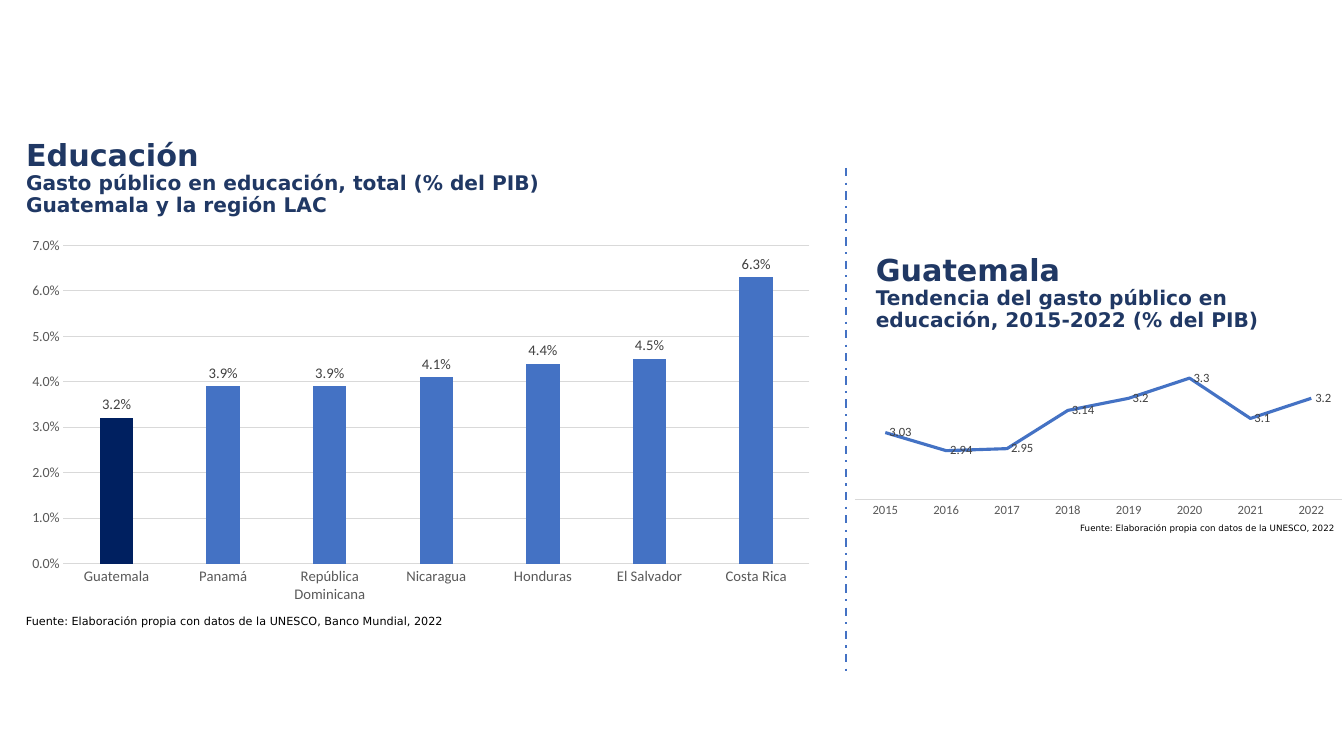
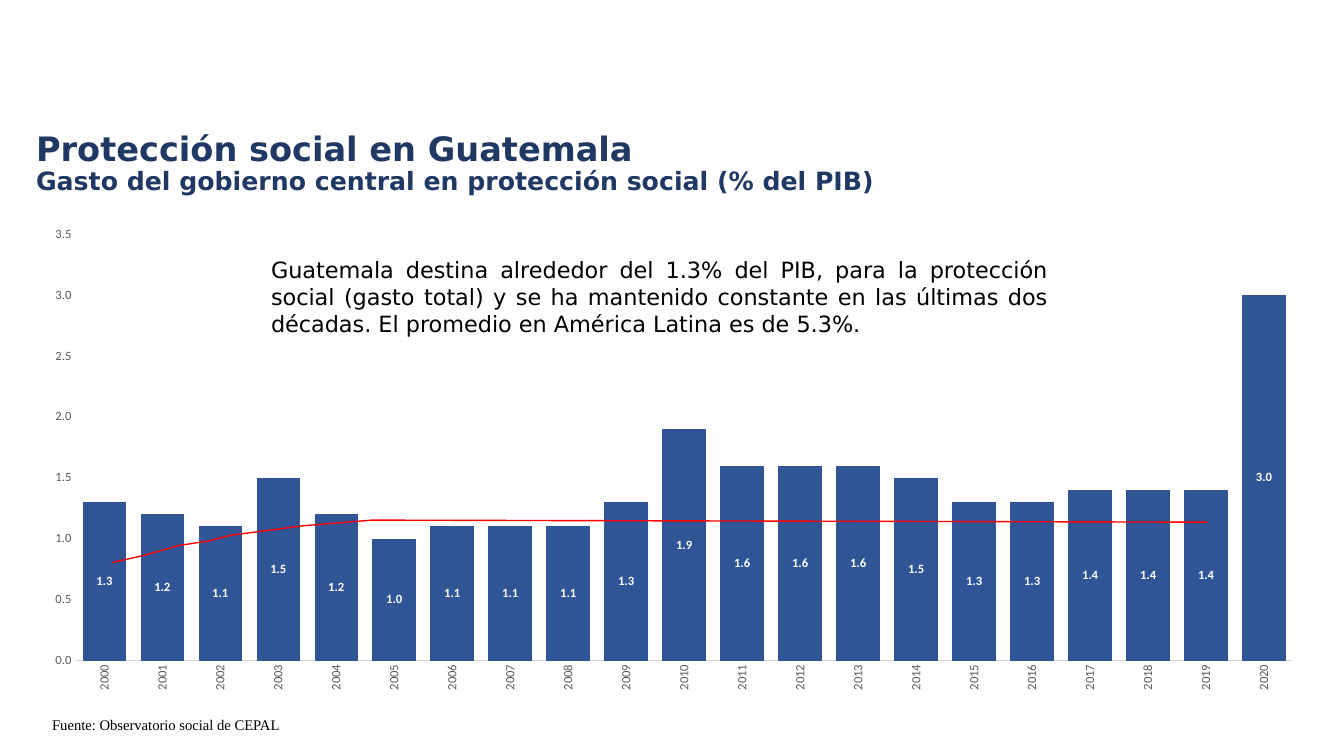
"""Build two slides on public social spending in Guatemala."""
from lxml import etree
from pptx import Presentation
from pptx.chart.data import CategoryChartData
from pptx.dml.color import RGBColor
from pptx.enum import chart as ch, dml, shapes, text
from pptx.oxml import parse_xml
from pptx.oxml.ns import nsdecls, qn
from pptx.util import Pt

COLORS = {
    "title": "203864", "text": "000000", "axis": "595959", "rule": "D9D9D9",
    "label": "404040", "blue": "4472C4", "highlight": "002060",
    "bar": "2F5597", "white": "FFFFFF", "trend": "FF0000",
}
SANS, SERIF, CHART_FONT = "DejaVu Sans", "Times New Roman", "Calibri"
ALIGN = text.PP_ALIGN


def rgb(name):
    return RGBColor.from_string(COLORS[name])


def style_font(font, size, color, face=CHART_FONT, bold=False):
    font.size, font.name, font.bold = Pt(size), face, bold
    font.color.rgb = rgb(color)


def style_line(line, color, width):
    line.color.rgb, line.width = rgb(color), Pt(width)


def add_text(slide, box, lines, face=SANS, color="text", bold=False,
             align=ALIGN.LEFT, spacing=1.0, anchor=text.MSO_ANCHOR.TOP):
    frame = slide.shapes.add_textbox(*map(Pt, box)).text_frame
    frame.word_wrap, frame.vertical_anchor = True, anchor
    frame.text = "\n".join(wording for wording, _ in lines)
    for paragraph, (_, size) in zip(frame.paragraphs, lines):
        paragraph.alignment, paragraph.line_spacing = align, spacing
        style_font(paragraph.runs[0].font, size, color, face, bold)


def add_title(slide, box, lines):
    add_text(slide, box, lines, color="title", bold=True, spacing=0.9,
             anchor=text.MSO_ANCHOR.MIDDLE)


def add_chart(slide, box, kind, categories, values, number_format,
              axis_size, label_size, label_color, label_place, bold=False):
    data = CategoryChartData(number_format=number_format)
    data.categories = categories
    data.add_series("Gasto público (% del PIB)", values)
    chart = slide.shapes.add_chart(kind, *map(Pt, box), data).chart
    chart.has_legend = chart.has_title = False
    style_font(chart.font, 10, "text")
    years = chart.category_axis
    years.major_tick_mark = ch.XL_TICK_MARK.NONE
    style_font(years.tick_labels.font, axis_size, "axis")
    style_line(years.format.line, "rule", 0.75)
    plot = chart.plots[0]
    plot.vary_by_categories = False
    plot.has_data_labels = True
    labels = plot.data_labels
    labels.show_value, labels.position = True, label_place
    labels.number_format, labels.number_format_is_linked = number_format, False
    style_font(labels.font, label_size, label_color, bold=bold)
    return chart


def scale_values(chart, low, high, step, gridlines=False):
    axis = chart.value_axis
    axis.minimum_scale, axis.maximum_scale, axis.major_unit = low, high, step
    axis.has_major_gridlines = gridlines
    if gridlines:
        style_line(axis.major_gridlines.format.line, "rule", 0.75)
    return axis


def style_value_axis(axis, size, number_format):
    axis.major_tick_mark = ch.XL_TICK_MARK.NONE
    axis.format.line.fill.background()
    labels = axis.tick_labels
    labels.number_format, labels.number_format_is_linked = number_format, False
    style_font(labels.font, size, "axis")


def style_bars(chart, color, gap, overlap):
    plot = chart.plots[0]
    plot.gap_width, plot.overlap = gap, overlap
    fill = plot.series[0].format.fill
    fill.solid()
    fill.fore_color.rgb = rgb(color)


def place_plot(chart, x, y, w, h):
    area = chart._chartSpace.xpath("c:chart/c:plotArea")[0]
    for layout in area.xpath("c:layout"):
        area.remove(layout)
    sizes = "".join(f'<c:{tag} val="{value}"/>'
                    for tag, value in zip("xywh", (x, y, w, h)))
    area.insert(0, parse_xml(
        f'<c:layout {nsdecls("c")}><c:manualLayout>'
        '<c:layoutTarget val="inner"/><c:xMode val="edge"/>'
        f'<c:yMode val="edge"/>{sizes}</c:manualLayout></c:layout>'))


def add_divider(slide, x, top, bottom):
    divider = slide.shapes.add_connector(
        shapes.MSO_CONNECTOR.STRAIGHT, Pt(x), Pt(top), Pt(x), Pt(bottom))
    style_line(divider.line, "blue", 1.5)
    divider.line.dash_style = dml.MSO_LINE.DASH_DOT
    etree.SubElement(divider._element.spPr, qn("a:effectLst"))


def add_trend(slide, points):
    start, *rest = [(Pt(x), Pt(y)) for x, y in points]
    builder = slide.shapes.build_freeform(*start)
    builder.add_line_segments(rest, close=False)
    trend = builder.convert_to_shape()
    trend.shadow.inherit = False
    trend.fill.background()
    style_line(trend.line, "trend", 1)


def build_education(slide):
    add_title(slide, (11.5, 92.4, 396.7, 70.6), [
        ("Educación", 21.6),
        ("Gasto público en educación, total (% del PIB)", 14.4),
        ("Guatemala y la región LAC", 14.4)])
    add_text(slide, (11.5, 436.3, 336.2, 18.7), [
        ("Fuente: Elaboración propia con datos de la UNESCO, Banco Mundial, 2022", 8)],
        spacing=0.9)
    region = add_chart(
        slide, (11.5, 164.2, 578.2, 272.2), ch.XL_CHART_TYPE.COLUMN_CLUSTERED,
        ["Guatemala", "Panamá", "República Dominicana", "Nicaragua",
         "Honduras", "El Salvador", "Costa Rica"],
        [0.032, 0.039, 0.039, 0.041, 0.044, 0.045, 0.063], "0.0%",
        10.5, 10.5, "label", ch.XL_LABEL_POSITION.OUTSIDE_END)
    style_value_axis(scale_values(region, 0, 0.07, 0.01, True), 10, "0.0%")
    style_bars(region, "blue", 219, -27)
    guatemala = region.plots[0].series[0].points[0].format.fill
    guatemala.solid()
    guatemala.fore_color.rgb = rgb("highlight")

    history = add_chart(
        slide, (603.4, 253.4, 362.2, 118.8), ch.XL_CHART_TYPE.LINE,
        [str(year) for year in range(2015, 2023)],
        [3.03, 2.94, 2.95, 3.14, 3.2, 3.3, 3.1, 3.2], "General",
        9, 9, "label", ch.XL_LABEL_POSITION.RIGHT)
    scale_values(history, 2.7, 3.4, 0.1).visible = False
    spending = history.plots[0].series[0]
    spending.smooth = False
    spending.marker.style = ch.XL_MARKER_STYLE.NONE
    style_line(spending.format.line, "blue", 2.25)
    add_divider(slide, 604, 120, 480)
    add_text(slide, (624.2, 372.2, 336.2, 13), [
        ("Fuente: Elaboración propia con datos de la UNESCO, 2022", 6.2)],
        align=ALIGN.RIGHT, spacing=0.7)
    add_title(slide, (618.5, 174.2, 320.4, 70.6), [
        ("Guatemala", 21.6),
        ("Tendencia del gasto público en educación, 2015-2022 (% del PIB)", 14.4)])


def build_protection(slide):
    add_title(slide, (18.7, 82.1, 828, 70.6), [
        ("Protección social en Guatemala", 24),
        ("Gasto del gobierno central en protección social (% del PIB)", 18)])
    spending = add_chart(
        slide, (30.2, 141.8, 910.8, 372.2), ch.XL_CHART_TYPE.COLUMN_CLUSTERED,
        [str(year) for year in range(2000, 2021)],
        [1.3, 1.2, 1.1, 1.5, 1.2, 1, 1.1, 1.1, 1.1, 1.3, 1.9,
         1.6, 1.6, 1.6, 1.5, 1.3, 1.3, 1.4, 1.4, 1.4, 3], "#,##0.0",
        9, 9, "white", ch.XL_LABEL_POSITION.CENTER, bold=True)
    style_value_axis(scale_values(spending, 0, 3.5, 0.5), 9, "#,##0.0")
    style_bars(spending, "bar", 33, -72)
    place_plot(spending, 0.026, 0.068, 0.955, 0.819)
    year_text = spending.category_axis._element.xpath("c:txPr/a:bodyPr")[0]
    year_text.set("rot", "-5400000")
    year_text.set("vert", "horz")
    add_trend(slide, [(80, 401.8), (103, 396.7), (128.2, 389.5), (148.3, 386.6),
                      (164.9, 382.3), (216.4, 375.6), (265.7, 371.5), (862.6, 373)])
    add_text(slide, (186.5, 179.3, 569.5, 65.5), [
        ("Guatemala destina alrededor del 1.3% del PIB, para la protección social "
         "(gasto total) y se ha mantenido constante en las últimas dos décadas. "
         "El promedio en América Latina es de 5.3%.", 16)], align=ALIGN.JUSTIFY)
    add_text(slide, (30.2, 507.6, 480.2, 20.9), [
        ("Fuente: Observatorio social de CEPAL", 10.5)], face=SERIF)


def main():
    deck = Presentation()
    deck.slide_width, deck.slide_height = Pt(960), Pt(540)
    for build in (build_education, build_protection):
        build(deck.slides.add_slide(deck.slide_layouts[6]))
    deck.save("out.pptx")


if __name__ == "__main__":
    main()
